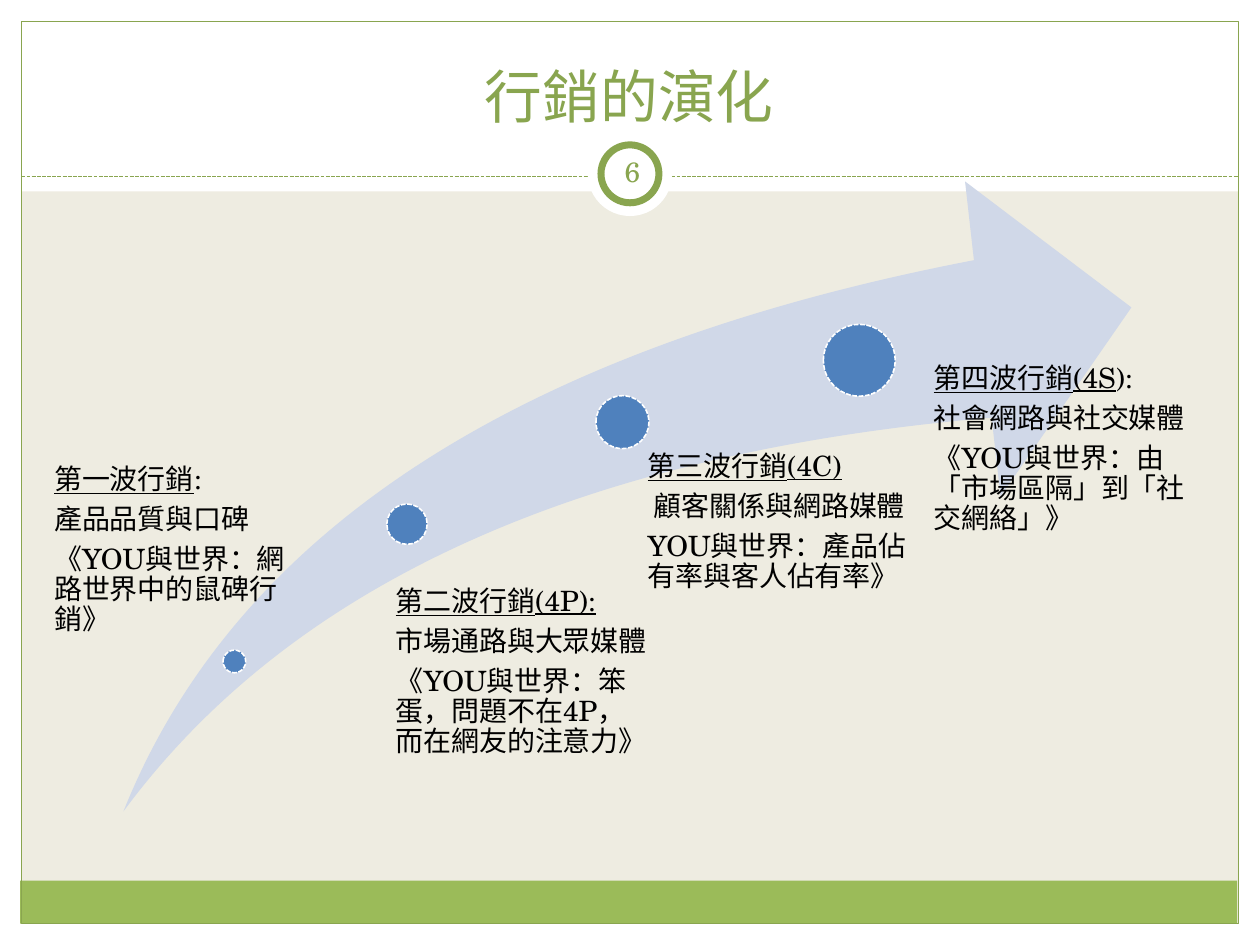
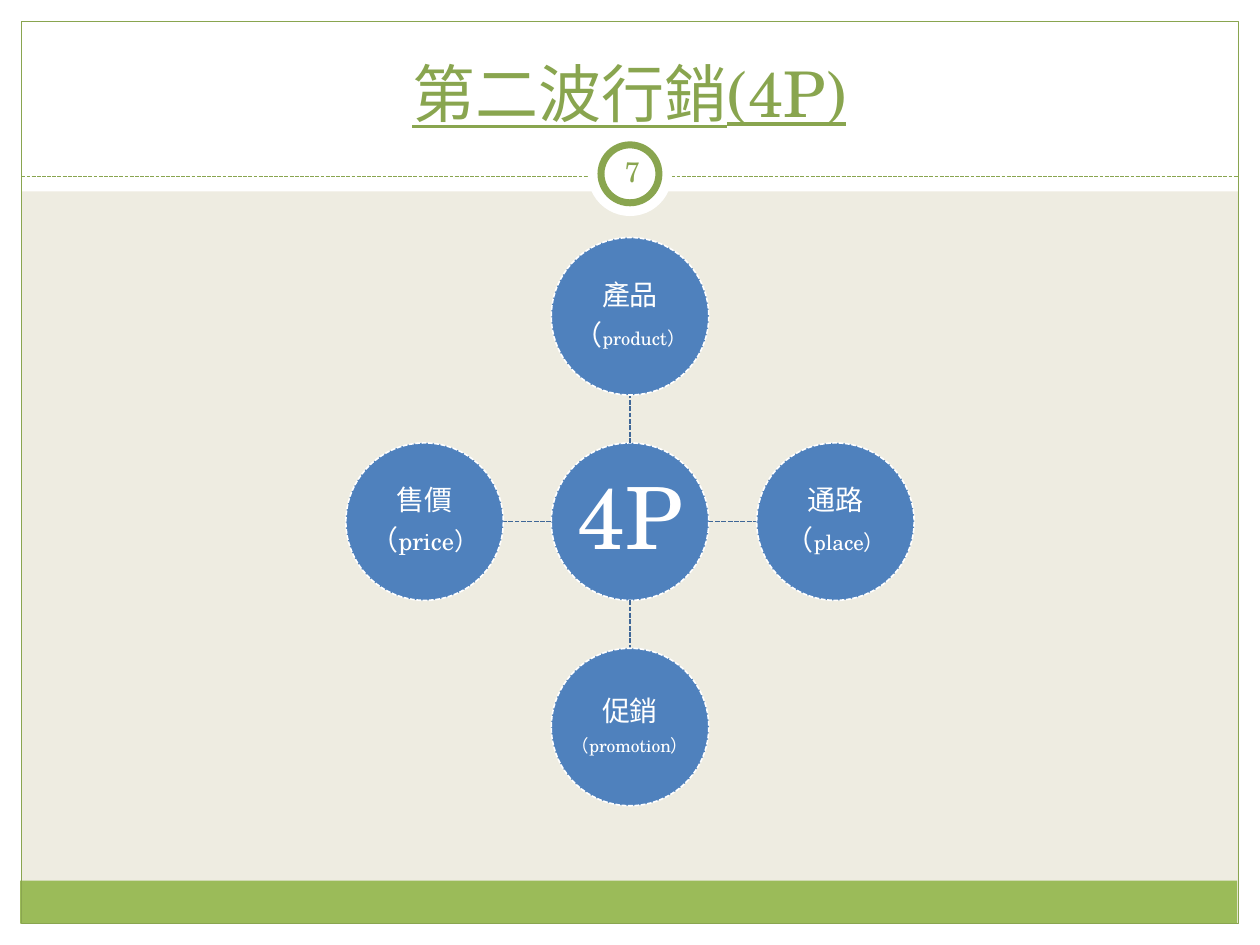
import pptx
import pptx.util
import pptx.dml.color
import pptx.enum.dml
import pptx.enum.shapes
import pptx.enum.text
import pptx.oxml.ns
import lxml.etree
from dataclasses import dataclass

Inches, Pt = pptx.util.Inches, pptx.util.Pt
KIND = pptx.enum.shapes.MSO_SHAPE
ALIGN = pptx.enum.text.PP_ALIGN
ANCHOR = pptx.enum.text.MSO_ANCHOR
DASH = pptx.enum.dml.MSO_LINE.SQUARE_DOT


# Theme
@dataclass(frozen=True)
class Theme:
    font: str = "TeX Gyre Schola"
    back: str = "EEECE1"
    white: str = "FFFFFF"
    black: str = "000000"
    green: str = "89A54F"
    band: str = "9BBB59"
    blue: str = "4F81BD"
    link: str = "3F6797"
    arrow: str = "D0D8E8"
    text: float = 16
    hub: float = 49
    thin: float = 0.75
    dash: float = 0.9
    ring: float = 4


T = Theme()

# Content: a paragraph is a list of (text, size, underlined) runs
def plain(text, size=T.text):
    return [(text, size, False)]


def under(text, size=T.text):
    return [(text, size, True)]


TITLES = [(6, under("", 33) and plain("行銷的演化", 33)),
          (7, under("第二波行銷(4P)", 36))]

# Waves: dot centre and size, text box, paragraphs
WAVES = [
    ((1.86, 5.25, 0.18), (0.43, 3.69, 1.84, 2.09),
     [under("第一波行銷") + plain(":"),
      plain("產品品質與口碑"),
      plain("《YOU與世界：網路世界中的鼠碑行銷》")]),
    ((3.23, 4.16, 0.32), (3.14, 4.66, 2.03, 1.29),
     [under("第二波行銷(4P):"),
      plain("市場通路與大眾媒體"),
      plain("《YOU與世界：笨蛋，問題不在4P，而在網友的注意力》")]),
    ((4.94, 3.35, 0.42), (5.14, 3.59, 2.13, 1.44),
     [under("第三波行銷(4C)"),
      plain(" 顧客關係與網路媒體"),
      plain("YOU與世界：產品佔有率與客人佔有率》")]),
    ((6.82, 2.86, 0.57), (7.41, 2.89, 2.05, 1.88),
     [under("第四波行銷(4S") + plain("):"),
      plain("社會網路與社交媒體"),
      plain("《YOU與世界：由「市場區隔」到「社交網絡」》")]),
]

# Spokes: direction from the hub, paragraphs
SPOKES = [
    ((0, -1), [plain("產品"), plain("（") + plain("product）", 10.5)]),
    ((1, 0), [plain("通路"), plain("（") + plain("place）", 12)]),
    ((0, 1), [plain("促銷"), plain("（promotion）", 10)]),
    ((-1, 0), [plain("售價"), plain("（") + plain("price）", 14)]),
]
HUB, DISC, STEP = (5, 4.14), 1.25, 1.63


# Helpers
def rgb(hue):
    return pptx.dml.color.RGBColor.from_string(hue)


def stroke(line, hue, width, dash=False):
    line.color.rgb = rgb(hue)
    line.width = Pt(width)
    if dash:
        line.dash_style = DASH


def draw(slide, kind, box, fill=None):
    shape = slide.shapes.add_shape(kind, *map(Inches, box))
    shape.shadow.inherit = False
    shape.line.fill.background()
    if fill:
        shape.fill.solid()
        shape.fill.fore_color.rgb = rgb(fill)
    else:
        shape.fill.background()
    return shape


def disc(slide, x, y, size, fill=T.blue):
    return draw(slide, KIND.OVAL, (x - size / 2, y - size / 2, size, size), fill)


def dot(slide, x, y, size):
    shape = disc(slide, x, y, size)
    stroke(shape.line, T.white, T.dash, True)
    return shape


def link(slide, start, end, hue, width):
    line = slide.shapes.add_connector(
        pptx.enum.shapes.MSO_CONNECTOR.STRAIGHT, *map(Inches, start + end))
    stroke(line.line, hue, width, True)
    props = line.element.find(pptx.oxml.ns.qn("p:spPr"))
    lxml.etree.SubElement(props, pptx.oxml.ns.qn("a:effectLst"))
    return line


def write(shape, paras, hue, align=ALIGN.LEFT, anchor=ANCHOR.TOP,
          wrap=True, inset=0.0, lead=1.0, after=0.0):
    frame = shape.text_frame
    frame.word_wrap = wrap
    frame.auto_size = pptx.enum.text.MSO_AUTO_SIZE.NONE
    frame.vertical_anchor = anchor
    frame.margin_left = frame.margin_right = Inches(inset)
    frame.margin_top = frame.margin_bottom = Inches(inset)
    for i, runs in enumerate(paras):
        para = frame.add_paragraph() if i else frame.paragraphs[0]
        para.alignment = align
        para.line_spacing = lead
        para.space_after = Pt(after)
        for text, size, line in runs:
            run = para.add_run()
            run.text = text
            run.font.name = T.font
            run.font.size = Pt(size)
            run.font.underline = line
            run.font.color.rgb = rgb(hue)


# Shared frame, drawn once and moved to the layout
def frame(slide, layout):
    edge, wide, high = 0.17, 10, 7.5
    parts = [draw(slide, KIND.RECTANGLE, box, fill) for box, fill in [
        ((0, high - edge, wide, edge), T.white),
        ((0, 0, wide, 1.52), T.white),
        ((0, 0, edge, high), T.white),
        ((wide - edge, 0, edge, high), T.white),
        ((0.16, 6.99, 9.66, 0.34), T.band),
        ((edge, edge, wide - 2 * edge, high - 2 * edge), None)]]
    stroke(parts[-1].line, T.green, T.thin)
    parts.append(link(slide, (edge, 1.4), (wide - edge, 1.4), T.green, T.thin))
    parts.append(disc(slide, 5, 1.38, 0.67, T.white))
    ring = disc(slide, 5, 1.38, 0.46, T.white)
    stroke(ring.line, T.green, T.ring)
    for i, part in enumerate(parts + [ring]):
        part.element.xpath(".//p:cNvPr")[0].set("id", str(100 + i))
        layout.shapes.element.append(part.element)


def head(slide, page, runs):
    title = slide.shapes.title
    title.left, title.top, title.width, title.height = map(
        Inches, (0.33, 0.25, 9.33, 0.83))
    write(title, [runs], T.green, ALIGN.CENTER, ANCHOR.BOTTOM, inset=0.05)
    badge = slide.shapes.add_textbox(*map(Inches, (4.77, 1.12, 0.5, 0.48)))
    write(badge, [plain(str(page))], T.green, ALIGN.CENTER, ANCHOR.MIDDLE,
          inset=0.05)


# Slide bodies
def waves(slide):
    arrow = draw(slide, KIND.SWOOSH_ARROW, (0.98, 1.44, 8, 5), T.arrow)
    arrow.adjustments[0] = arrow.adjustments[1] = 0.25
    for spot, box, paras in WAVES:
        dot(slide, *spot)
        note = slide.shapes.add_textbox(*map(Inches, box))
        write(note, paras, T.black, lead=0.9, after=5.6)


def wheel(slide):
    x, y = HUB
    near, far = DISC / 2, STEP - DISC / 2
    discs = [((0, 0), [plain("4P", T.hub)])] + SPOKES
    for (dx, dy), paras in discs:
        if dx or dy:
            link(slide, (x + dx * near, y + dy * near),
                 (x + dx * far, y + dy * far), T.link, T.dash)
        shape = dot(slide, x + dx * STEP, y + dy * STEP, DISC)
        write(shape, paras, T.white, ALIGN.CENTER, ANCHOR.MIDDLE,
              wrap=False, lead=0.9, after=5.6)


def main():
    deck = pptx.Presentation()
    deck.slide_width, deck.slide_height = Inches(10), Inches(7.5)
    layout = deck.slide_layouts[5]
    fill = deck.slide_master.background.fill
    fill.solid()
    fill.fore_color.rgb = rgb(T.back)
    for i, (body, (page, runs)) in enumerate(zip([waves, wheel], TITLES)):
        slide = deck.slides.add_slide(layout)
        if i == 0:
            frame(slide, layout)
        head(slide, page, runs)
        body(slide)
    deck.save("out.pptx")


if __name__ == "__main__":
    main()
